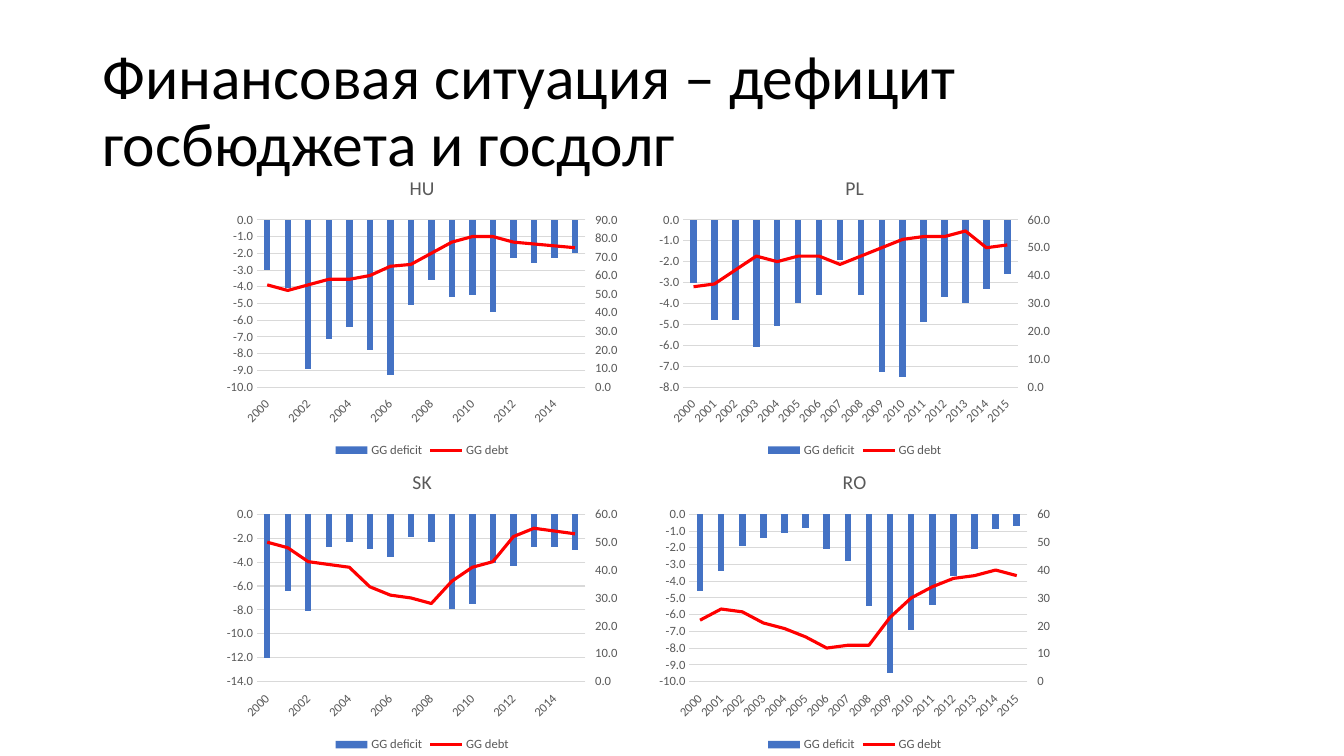
from copy import deepcopy

from lxml.etree import SubElement
from pptx import Presentation
from pptx.chart.axis import CategoryAxis, ValueAxis
from pptx.chart.data import CategoryChartData
from pptx.dml.color import RGBColor
from pptx.enum.chart import (XL_CHART_TYPE, XL_LEGEND_POSITION, XL_MARKER_STYLE,
                             XL_TICK_LABEL_POSITION, XL_TICK_MARK)
from pptx.enum.text import MSO_ANCHOR
from pptx.oxml.ns import qn
from pptx.util import Cm, Pt

COLORS = {"text": "000000", "label": "595959", "grid": "D9D9D9",
          "deficit": "4472C4", "debt": "FF0000"}
FONT = "Calibri"
YEARS = [str(year) for year in range(2000, 2016)]
LEFT, TOP, WIDTH, HEIGHT = 5.51, 4.01, 10.26, 7.62
STEP_X, STEP_Y = 10.9, 7.42

# country, deficit, debt, debt axis maximum, debt axis number format
COUNTRIES = [
    ("HU",
     [-3, -4.1, -8.9, -7.1, -6.4, -7.8, -9.3, -5.1, -3.6, -4.6, -4.5, -5.5, -2.3, -2.6, -2.3, -2],
     [55, 52, 55, 58, 58, 60, 65, 66, 72, 78, 81, 81, 78, 77, 76, 75], 90, "#,##0.0"),
    ("PL",
     [-3, -4.8, -4.8, -6.1, -5.1, -4, -3.6, -1.9, -3.6, -7.3, -7.5, -4.9, -3.7, -4, -3.3, -2.6],
     [36, 37, 42, 47, 45, 47, 47, 44, 47, 50, 53, 54, 54, 56, 50, 51], 60, "#,##0.0"),
    ("SK",
     [-12, -6.4, -8.1, -2.7, -2.3, -2.9, -3.6, -1.9, -2.3, -7.9, -7.5, -4.1, -4.3, -2.7, -2.7, -3],
     [50, 48, 43, 42, 41, 34, 31, 30, 28, 36, 41, 43, 52, 55, 54, 53], 60, "#,##0.0"),
    ("RO",
     [-4.6, -3.4, -1.9, -1.4, -1.1, -0.8, -2.1, -2.8, -5.5, -9.5, -6.9, -5.4, -3.7, -2.1, -0.9, -0.7],
     [22, 26, 25, 21, 19, 16, 12, 13, 13, 23, 30, 34, 37, 38, 40, 38], 60, "#,##0"),
]


def rgb(name):
    return RGBColor.from_string(COLORS[name])


def set_font(font, size, color):
    for key, value in {"name": FONT, "size": Pt(size), "bold": False}.items():
        setattr(font, key, value)
    font.color.rgb = rgb(color)


def set_line(line, color, width):
    line.color.rgb = rgb(color)
    line.width = Pt(width)


def set_number_format(axis, code):
    axis.tick_labels.number_format = code
    axis.tick_labels.number_format_is_linked = False


def add_title(s, text):
    tf = s.shapes.add_textbox(Cm(2.33), Cm(1.01), Cm(29.21), Cm(3.68)).text_frame
    tf.word_wrap = True
    tf.vertical_anchor = MSO_ANCHOR.MIDDLE
    p = tf.paragraphs[0]
    p.line_spacing = 0.9
    r = p.add_run()
    r.text = text
    set_font(r.font, 44, "text")


def style_axes(chart):
    years, deficit = chart.category_axis, chart.value_axis
    for axis in (years, deficit):
        axis.major_tick_mark = axis.minor_tick_mark = XL_TICK_MARK.NONE
        set_font(axis.tick_labels.font, 9, "label")
    years.tick_label_position = XL_TICK_LABEL_POSITION.LOW
    years._element.find(qn("c:txPr")).find(qn("a:bodyPr")).set("rot", "-2700000")
    set_line(years.format.line, "grid", 0.75)
    set_number_format(deficit, "#,##0.0")
    deficit.format.line.fill.background()
    set_line(deficit.major_gridlines.format.line, "grid", 0.75)


def move_debt_to_right_axis(chart, maximum, number_format):
    """Turn the second series into a line with its own value axis."""
    bars = chart.plots[0]._element
    debt = bars.findall(qn("c:ser"))[1]
    for bar_only in debt.findall(qn("c:invertIfNegative")):
        debt.remove(bar_only)
    lines = bars.makeelement(qn("c:lineChart"))
    bars.addnext(lines)
    SubElement(lines, qn("c:grouping"), val="standard")
    SubElement(lines, qn("c:varyColors"), val="0")
    lines.append(debt)
    SubElement(lines, qn("c:marker"), val="1")

    ids = ("50010", "50020")
    left_axes = (chart.category_axis._element, chart.value_axis._element)
    right_axes = [deepcopy(axis) for axis in left_axes]
    for axis, own_id, cross_id in zip(right_axes, ids, ids[::-1]):
        SubElement(lines, qn("c:axId"), val=own_id)
        axis.find(qn("c:axId")).set("val", own_id)
        axis.find(qn("c:crossAx")).set("val", cross_id)
    left_axes[1].addnext(right_axes[1])
    right_axes[1].addnext(right_axes[0])
    CategoryAxis(right_axes[0]).visible = False
    right_axes[1].find(qn("c:axPos")).set("val", "r")
    right_axes[1].find(qn("c:crosses")).set("val", "max")
    right = ValueAxis(right_axes[1])
    for key, value in {"has_major_gridlines": False, "minimum_scale": 0,
                       "maximum_scale": maximum,
                       "major_tick_mark": XL_TICK_MARK.OUTSIDE}.items():
        setattr(right, key, value)
    set_number_format(right, number_format)


def add_country_chart(s, left, top, country, deficit, debt, maximum, number_format):
    data = CategoryChartData()
    data.categories = YEARS
    data.add_series("GG deficit", deficit)
    data.add_series("GG debt", debt)
    chart = s.shapes.add_chart(XL_CHART_TYPE.COLUMN_CLUSTERED, Cm(left), Cm(top),
                               Cm(WIDTH), Cm(HEIGHT), data).chart
    set_font(chart.font, 10, "text")
    chart.has_title = True
    r = chart.chart_title.text_frame.paragraphs[0].add_run()
    r.text = country
    set_font(r.font, 14, "label")
    chart.has_legend = True
    chart.legend.position = XL_LEGEND_POSITION.BOTTOM
    chart.legend.include_in_layout = False
    set_font(chart.legend.font, 9, "label")
    style_axes(chart)
    move_debt_to_right_axis(chart, maximum, number_format)

    bars, lines = chart.plots
    for key, value in {"gap_width": 219, "overlap": -27, "vary_by_categories": False}.items():
        setattr(bars, key, value)
    deficit_bars = bars.series[0]
    deficit_bars.invert_if_negative = False
    fill = deficit_bars.format.fill
    fill.solid()
    fill.fore_color.rgb = rgb("deficit")
    debt_line = lines.series[0]
    debt_line.smooth = False
    debt_line.marker.style = XL_MARKER_STYLE.NONE
    set_line(debt_line.format.line, "debt", 2.25)


def main():
    prs = Presentation()
    prs.slide_width, prs.slide_height = Cm(33.87), Cm(19.05)
    s = prs.slides.add_slide(prs.slide_layouts[6])
    add_title(s, "Финансовая ситуация – дефицит госбюджета и госдолг")
    for i, country in enumerate(COUNTRIES):
        row, col = divmod(i, 2)
        add_country_chart(s, LEFT + col * STEP_X, TOP + row * STEP_Y, *country)
    prs.save("out.pptx")


if __name__ == "__main__":
    main()
